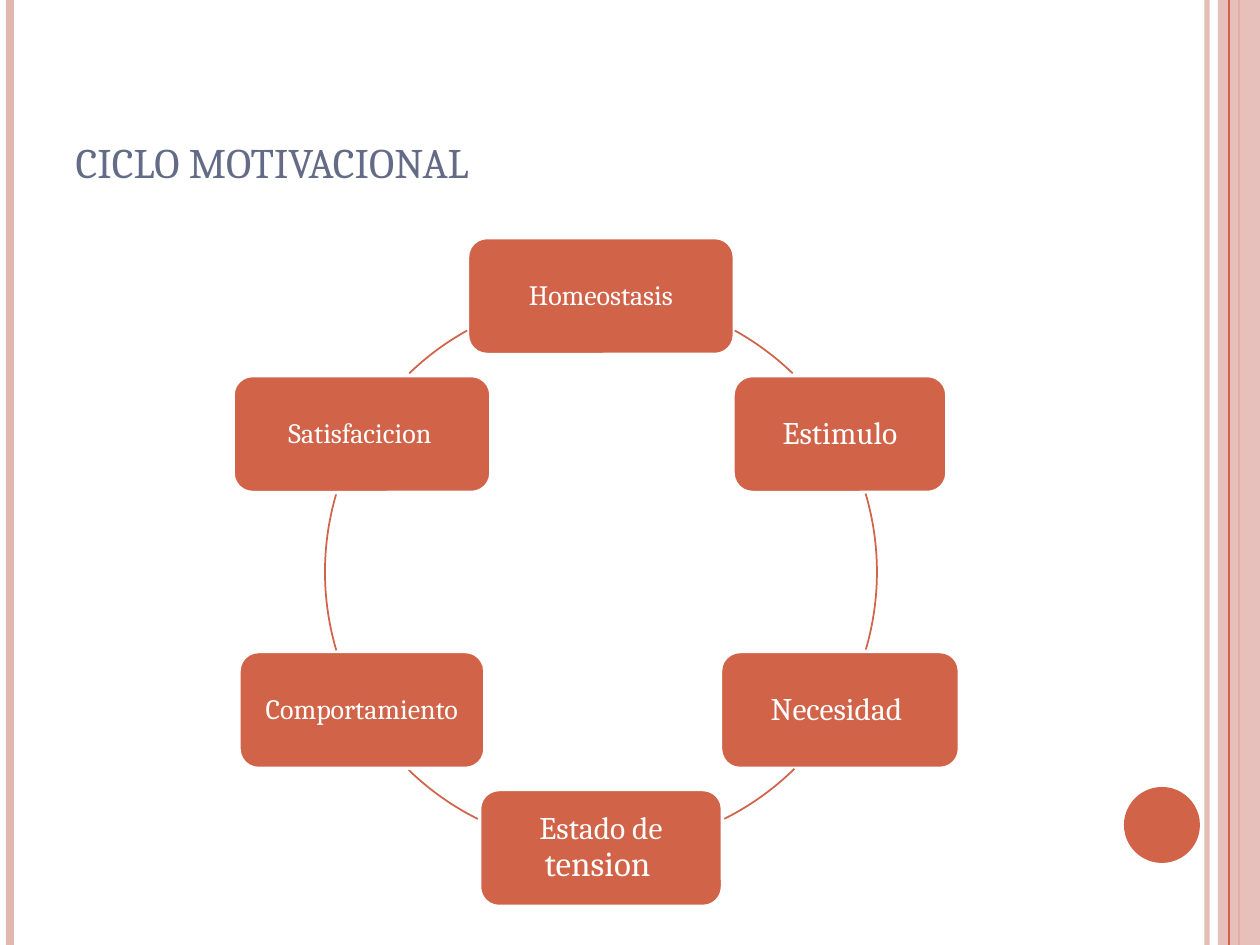
from math import cos, radians, sin

from lxml.etree import SubElement
from pptx import Presentation
from pptx.dml.color import RGBColor
from pptx.enum.shapes import MSO_CONNECTOR, MSO_SHAPE
from pptx.enum.text import MSO_ANCHOR, PP_ALIGN
from pptx.oxml.ns import qn
from pptx.util import Pt

SCALE = 914400 / 126
COLORS = {
    "rust": "D16349",
    "pink": "E5B7B1",
    "slate": "646B86",
    "white": "FFFFFF",
}
FONT = "Cambria"
WIDTH, HEIGHT = 1260, 945


def px(*values):
    return [round(value * SCALE) for value in values]


def paint(fill, color, opacity=100):
    fill.solid()
    fill.fore_color.rgb = RGBColor.from_string(COLORS[color])
    if opacity < 100:
        for node in fill._xPr.iter(qn("a:srgbClr")):
            SubElement(node, qn("a:alpha")).set("val", str(opacity * 1000))


deck = Presentation()
deck.slide_width, deck.slide_height = px(WIDTH, HEIGHT)
page = deck.slides.add_slide(deck.slide_layouts[5])
shapes = page.shapes

stripes = [
    (1207, "pink", 3, 93),
    (10, "pink", 4.5, 100),
    (1239, "rust", 1.5, 100),
    (1229, "rust", 0.75, 100),
]
for x, color, weight, opacity in stripes:
    if x == 1229:
        band = shapes.add_shape(MSO_SHAPE.RECTANGLE, *px(1218, 0, 42, HEIGHT))
        band.shadow.inherit = False
        paint(band.fill, "pink", 87)
        band.line.fill.background()
    stripe = shapes.add_connector(MSO_CONNECTOR.STRAIGHT, *px(x, 0, x, HEIGHT))
    stripe.line.width = Pt(weight)
    paint(stripe.line.fill, color, opacity)
    SubElement(stripe._element.spPr, qn("a:effectLst"))

dot = shapes.add_shape(MSO_SHAPE.OVAL, *px(1124, 787, 76, 76))
dot.shadow.inherit = False
paint(dot.fill, "rust")
dot.line.fill.background()

title = shapes.title
title.left, title.top, title.width, title.height = px(63, 38, 1029, 157)
frame = title.text_frame
frame.word_wrap = True
frame.vertical_anchor = MSO_ANCHOR.BOTTOM
para = frame.paragraphs[0]
para.alignment = PP_ALIGN.LEFT
para.font.name = FONT
para.font.size = Pt(30)
para.font.color.rgb = RGBColor.from_string(COLORS["slate"])
span = para.add_run()
span.text = "ciclo motivacional"
span._r.get_or_add_rPr().set("cap", "small")

CENTER_X, CENTER_Y, RADIUS = 601, 572, 276
BOX_HEIGHT = 117
steps = [
    (267, [("Homeostasis", 16)], 299, 314),
    (214, [("Estimulo", 18)], 343.5, 16.5),
    (239, [("Necesidad ", 18)], 45.5, 63.5),
    (243, [("Estado de ", 18), ("tension", 20), (" ", 18)], 116.5, 134.5),
    (246, [("Comportamiento", 16)], 163.5, 196.5),
    (258, [("Satisfacicion", 16), (" ", 10.5)], 226, 241),
]
for index, (width, spans, start, end) in enumerate(steps):
    angle = radians(60 * index - 90)
    middle_x = CENTER_X + RADIUS * cos(angle)
    middle_y = CENTER_Y + RADIUS * sin(angle)
    box = shapes.add_shape(
        MSO_SHAPE.ROUNDED_RECTANGLE,
        *px(middle_x - width / 2, middle_y - BOX_HEIGHT / 2, width, BOX_HEIGHT),
    )
    box.shadow.inherit = False
    paint(box.fill, "rust")
    paint(box.line.fill, "white")
    box.line.width = Pt(2)
    frame = box.text_frame
    frame.word_wrap = True
    frame.vertical_anchor = MSO_ANCHOR.MIDDLE
    (frame.margin_left, frame.margin_top,
     frame.margin_right, frame.margin_bottom) = px(9, 9, 9, 9)
    para = frame.paragraphs[0]
    para.alignment = PP_ALIGN.CENTER
    para.line_spacing = 0.9
    para.font.name = FONT
    para.font.color.rgb = RGBColor.from_string(COLORS["white"])
    for text, size in spans:
        span = para.add_run()
        span.text = text
        span.font.size = Pt(size)

    arc = shapes.add_shape(
        MSO_SHAPE.ARC,
        *px(CENTER_X - RADIUS, CENTER_Y - RADIUS, 2 * RADIUS, 2 * RADIUS),
    )
    arc.shadow.inherit = False
    arc.fill.background()
    paint(arc.line.fill, "rust")
    arc.line.width = Pt(1)
    arc.adjustments[0] = start * 0.6
    arc.adjustments[1] = end * 0.6

deck.save("out.pptx")
